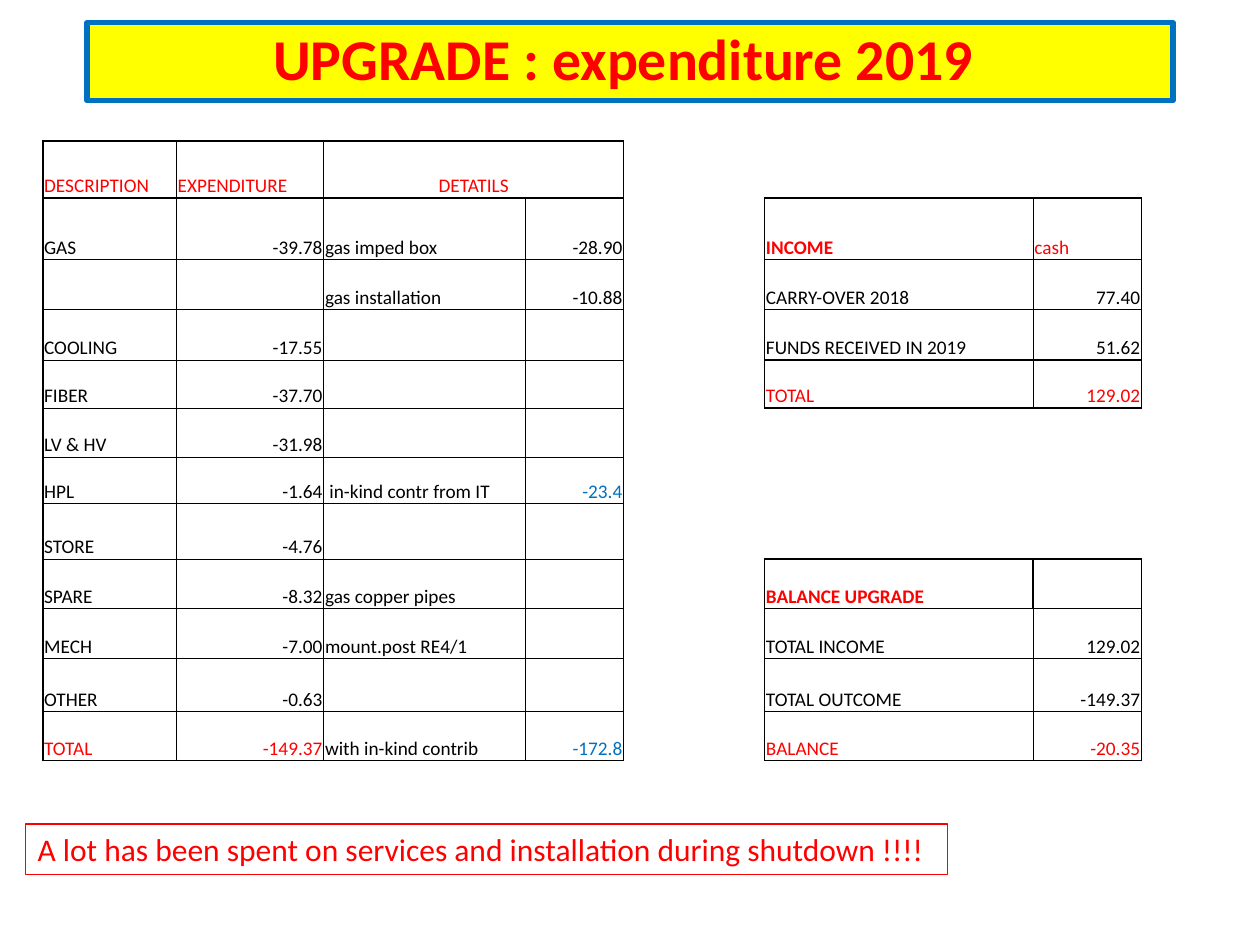
from lxml import etree
from pptx import Presentation
from pptx.dml.color import RGBColor
from pptx.enum.shapes import MSO_SHAPE
from pptx.enum.text import MSO_ANCHOR, MSO_AUTO_SIZE, PP_ALIGN
from pptx.oxml.ns import qn
from pptx.util import Inches, Pt

RED = RGBColor(0xFF, 0x00, 0x00)
BLUE = RGBColor(0x00, 0x70, 0xC0)
YELLOW = RGBColor(0xFF, 0xFF, 0x00)
WHITE = RGBColor(0xFF, 0xFF, 0xFF)
BLACK = RGBColor(0x00, 0x00, 0x00)
RECT = MSO_SHAPE.RECTANGLE
LEFT, CENTER, RIGHT = PP_ALIGN.LEFT, PP_ALIGN.CENTER, PP_ALIGN.RIGHT
TOP, MIDDLE, BOTTOM = MSO_ANCHOR.TOP, MSO_ANCHOR.MIDDLE, MSO_ANCHOR.BOTTOM
GROW = MSO_AUTO_SIZE.SHAPE_TO_FIT_TEXT
PLAIN_TABLE = "{2D5ABB26-0587-4C30-8999-92F81FD0307C}"
THICK, THIN = Pt(1), Pt(0.5)

# Percent of the slide's width and height
COLS = [10.6, 11.7, 16, 7.8, 5.6, 2.5, 3.1, 21.3, 8.6]
ROWS = [6, 6.53, 5.33, 5.33, 5.07, 5.2, 4.93, 5.87, 5.2, 5.33, 5.6, 5.2]

EXPENDITURE = [
    ("DESCRIPTION", "EXPENDITURE", "DETATILS", ""),
    ("GAS", "-39.78", "gas imped box", "-28.90"),
    ("", "", "gas installation", "-10.88"),
    ("COOLING", "-17.55", "", ""),
    ("FIBER", "-37.70", "", ""),
    ("LV & HV", "-31.98", "", ""),
    ("HPL", "-1.64", " in-kind contr from IT", "-23.4"),
    ("STORE", "-4.76", "", ""),
    ("SPARE", "-8.32", "gas copper pipes", ""),
    ("MECH", "-7.00", "mount.post RE4/1", ""),
    ("OTHER", "-0.63", "", ""),
    ("TOTAL", "-149.37", "with in-kind contrib", "-172.8"),
]
INCOME = [
    ("INCOME", "cash"),
    ("CARRY-OVER 2018", "77.40"),
    ("FUNDS RECEIVED IN 2019", "51.62"),
    ("TOTAL", "129.02"),
]
BALANCE = [
    ("BALANCE UPGRADE", ""),
    ("TOTAL INCOME", "129.02"),
    ("TOTAL OUTCOME", "-149.37"),
    ("BALANCE", "-20.35"),
]
BOLD = {"INCOME", "BALANCE UPGRADE"}
SPECIAL_COLORS = {"with in-kind contrib": BLACK, "-23.4": BLUE, "-172.8": BLUE}


class Deck:
    font = "Calibri"
    cell_size = 11

    def __init__(self, width, height):
        self.prs = Presentation()
        self.prs.slide_width = Inches(width)
        self.prs.slide_height = Inches(height)
        self.s = self.prs.slides.add_slide(self.prs.slide_layouts[6])

    def x(self, percent):
        return int(self.prs.slide_width * percent / 100)

    def y(self, percent):
        return int(self.prs.slide_height * percent / 100)

    def set_text(self, tf, text, size, color, bold=False, align=LEFT):
        tf.text = text
        p = tf.paragraphs[0]
        p.alignment = align
        for r in p.runs:
            r.font.name = self.font
            r.font.size = Pt(size)
            r.font.bold = bold
            r.font.color.rgb = color

    def box(self, x, y, w, h, text, size, fill, line, weight,
            bold=False, align=LEFT, anchor=TOP):
        sp = self.s.shapes.add_shape(RECT, self.x(x), self.y(y), self.x(w), self.y(h))
        sp.shadow.inherit = False
        sp.fill.solid()
        sp.fill.fore_color.rgb = fill
        sp.line.color.rgb = line
        sp.line.width = Pt(weight)
        sp.text_frame.vertical_anchor = anchor
        self.set_text(sp.text_frame, text, size, RED, bold, align)
        return sp.text_frame

    def table(self, x, y, cols, rows):
        frame = self.s.shapes.add_table(len(rows), len(cols), self.x(x), self.y(y),
                                        self.x(sum(cols)), self.y(sum(rows)))
        table = frame.table
        table.first_row = table.horz_banding = False
        frame._element.find(".//" + qn("a:tableStyleId")).text = PLAIN_TABLE
        for column, width in zip(table.columns, cols):
            column.width = self.x(width)
        for row, height in zip(table.rows, rows):
            row.height = self.y(height)
        for cell in table.iter_cells():
            cell.margin_left = cell.margin_top = cell.margin_right = Inches(0.01)
            cell.margin_bottom = 0
            cell.vertical_anchor = BOTTOM
        return table

    def borders(self, cell, widths):
        """Draw the left, right, top and bottom sides; None leaves a side open."""
        tc_pr = cell._tc.get_or_add_tcPr()
        for side, width in zip("LRTB", widths):
            if width:
                ln = etree.SubElement(tc_pr, qn(f"a:ln{side}"), w=str(width))
                fill = etree.SubElement(ln, qn("a:solidFill"))
                etree.SubElement(fill, qn("a:srgbClr"), val=str(BLACK))

    def block(self, table, top, left, data, open_after=None):
        """Fill a framed part of the table; the header has no line after open_after."""
        last_row, last_col = len(data) - 1, len(data[0]) - 1
        for i, texts in enumerate(data):
            for j, text in enumerate(texts):
                cell = table.cell(top + i, left + j)
                header = i == 0
                sides = [THICK if j == 0 else THIN,
                         THICK if j == last_col else THIN,
                         THICK if i in (0, 1, last_row) else THIN,
                         THICK if i in (0, last_row - 1, last_row) else THIN]
                if header and open_after is not None:
                    if j == open_after:
                        sides[1] = THICK if cell.is_merge_origin else None
                    elif j == open_after + 1:
                        sides[0] = None
                self.borders(cell, sides)
                cell.fill.solid()
                cell.fill.fore_color.rgb = WHITE
                color = SPECIAL_COLORS.get(text, RED if i in (0, last_row) else BLACK)
                if cell.is_merge_origin:
                    align = CENTER
                else:
                    align = RIGHT if j % 2 and not header else LEFT
                if not cell.is_spanned:
                    self.set_text(cell.text_frame, text, self.cell_size, color,
                                  text in BOLD, align)


def main():
    deck = Deck(10, 7.5)
    tf = deck.box(6.9, 2.4, 86.2, 8.27, "UPGRADE : expenditure 2019 ", 33,
                  YELLOW, BLUE, 3, bold=True, align=CENTER, anchor=MIDDLE)
    tf.paragraphs[0].line_spacing = 0.9

    tf = deck.box(2, 87.2, 73.2, 5.33,
                  "A lot has been spent on services and installation during shutdown !!!!",
                  18, WHITE, RED, 0.75)
    tf.word_wrap = False
    tf.auto_size = GROW

    table = deck.table(3.4, 14.93, COLS, ROWS)
    table.cell(0, 2).merge(table.cell(0, 3))
    deck.block(table, 0, 0, EXPENDITURE, open_after=2)
    deck.block(table, 1, 7, INCOME)
    deck.block(table, 8, 7, BALANCE, open_after=0)
    deck.prs.save("out.pptx")


if __name__ == "__main__":
    main()
